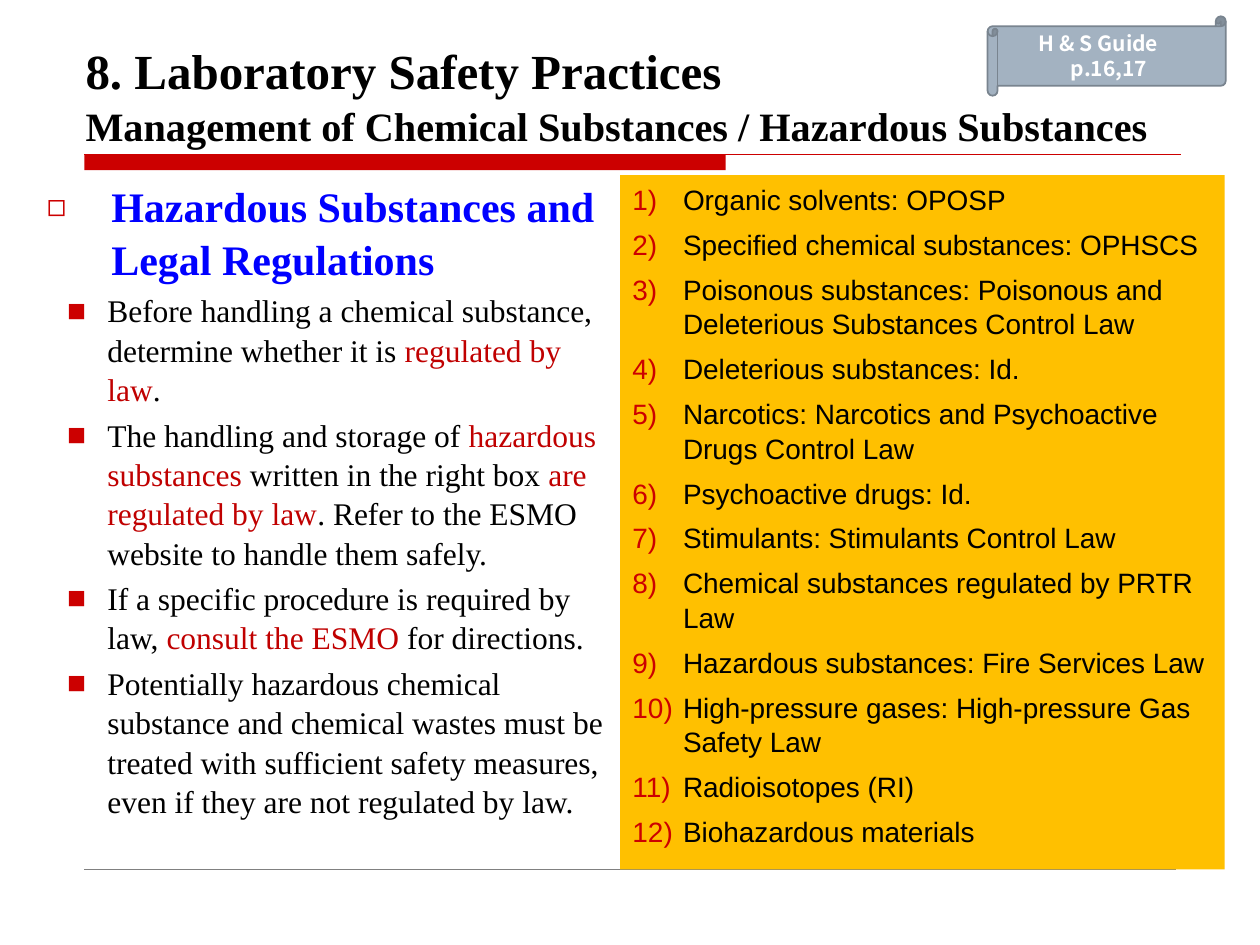
from dataclasses import dataclass

import pptx
import pptx.dml.color
import pptx.enum.shapes
import pptx.enum.text
import pptx.oxml
import pptx.oxml.ns
import pptx.util
from pptx.util import Cm

Anchor = pptx.enum.text.MSO_ANCHOR
Align = pptx.enum.text.PP_ALIGN
Shape = pptx.enum.shapes.MSO_SHAPE


@dataclass(frozen=True)
class Theme:
    serif: str = "Times New Roman"
    sans: str = "Arial"
    badge_font: str = "Noto Sans CJK JP"
    black: str = "000000"
    white: str = "FFFFFF"
    red: str = "CC0000"
    emphasis: str = "C00000"
    blue: str = "0000FF"
    amber: str = "FFC000"
    grey: str = "808080"
    scroll: str = "A3B2C1"
    scroll_edge: str = "79848F"
    title_size: int = 28
    subtitle_size: int = 23
    heading_size: int = 24
    body_size: int = 18
    list_size: int = 16
    badge_size: int = 12
    line_spacing: float = 1.04


THEME = Theme()

# Pieces at odd positions are emphasised.
ADVICE = [
    ["Before handling a chemical substance, determine whether it is ",
     "regulated by law", "."],
    ["The handling and storage of ", "hazardous substances",
     " written in the right box ", "are regulated by law",
     ". Refer to the ESMO website to handle them safely."],
    ["If a specific procedure is required by law, ", "consult the ESMO ",
     "for directions."],
    ["Potentially hazardous chemical substance and chemical wastes must be treated "
     "with sufficient safety measures, even if they are not regulated by law."],
]

REGULATED = [
    "Organic solvents: OPOSP",
    "Specified chemical substances: OPHSCS",
    "Poisonous substances: Poisonous and Deleterious Substances Control Law",
    "Deleterious substances: Id.",
    "Narcotics: Narcotics and Psychoactive Drugs Control Law",
    "Psychoactive drugs: Id.",
    "Stimulants: Stimulants Control Law",
    "Chemical substances regulated by PRTR Law",
    "Hazardous substances: Fire Services Law",
    "High-pressure gases: High-pressure Gas Safety Law",
    "Radioisotopes (RI)",
    "Biohazardous materials",
]


def rgb(color):
    return pptx.dml.color.RGBColor.from_string(color)


def add_span(para, text, *, font, size, color=THEME.black, bold=False):
    span = para.add_run()
    span.text = text
    span.font.name = font
    span.font.size = pptx.util.Pt(size)
    span.font.bold = bold
    span.font.color.rgb = rgb(color)


def add_bullet(para, indent, hanging, *, char=None, scale=100):
    """Hang the paragraph on a red character, or on a number when none is given."""
    properties = para._p.get_or_add_pPr()
    properties.set("marL", str(Cm(indent)))
    properties.set("indent", str(-Cm(hanging)))

    def append(tag):
        return pptx.oxml.ns.qn(tag), pptx.oxml.parse_xml(
            f'<{tag} xmlns:a="http://schemas.openxmlformats.org/drawingml/2006/main"/>')[1:]

    def child(parent, tag, **attributes):
        element = parent.makeelement(pptx.oxml.ns.qn(tag), attributes)
        parent.append(element)
        return element

    child(child(properties, "a:buClr"), "a:srgbClr", val=THEME.red)
    child(properties, "a:buSzPct", val=str(scale * 1000))
    child(properties, "a:buFont", typeface=THEME.sans)
    if char:
        child(properties, "a:buChar", char=char)
    else:
        child(properties, "a:buAutoNum", type="arabicParenR")


def next_paragraph(frame, space_before=0):
    """Return the empty first paragraph, or a new one with space before it."""
    first = frame.paragraphs[0]
    is_first = len(frame.paragraphs) == 1 and not first.runs
    para = first if is_first else frame.add_paragraph()
    para.space_before = pptx.util.Pt(0 if is_first else space_before)
    para.line_spacing = THEME.line_spacing
    para.alignment = Align.LEFT
    return para


def prepare_frame(shape, anchor):
    frame = shape.text_frame
    frame.word_wrap = True
    frame.auto_size = pptx.enum.text.MSO_AUTO_SIZE.NONE
    frame.vertical_anchor = anchor
    return frame


def place(shape, left, top, width, height):
    shape.left, shape.top = Cm(left), Cm(top)
    shape.width, shape.height = Cm(width), Cm(height)


def add_block(page, kind, left, top, width, height, *, fill, edge=None):
    block = page.shapes.add_shape(kind, Cm(left), Cm(top), Cm(width), Cm(height))
    block.shadow.inherit = False
    block.fill.solid()
    block.fill.fore_color.rgb = rgb(fill)
    if edge:
        block.line.color.rgb = rgb(edge)
        block.line.width = pptx.util.Pt(1)
    else:
        block.line.fill.background()
    return block


def add_rule(page, left, right, y, *, color, weight):
    rule = page.shapes.add_connector(
        pptx.enum.shapes.MSO_CONNECTOR.STRAIGHT, Cm(left), Cm(y), Cm(right), Cm(y))
    rule.line.color.rgb = rgb(color)
    rule.line.width = pptx.util.Pt(weight)
    properties = rule._element.spPr
    properties.append(properties.makeelement(pptx.oxml.ns.qn("a:effectLst"), {}))


def fill_title(title):
    place(title, 1.47, 1.07, 22.23, 2.08)
    para = next_paragraph(prepare_frame(title, Anchor.BOTTOM))
    add_span(para, "8. Laboratory Safety Practices",
             font=THEME.serif, size=THEME.title_size, bold=True)
    para.add_line_break()
    add_span(para, "Management of Chemical Substances / Hazardous Substances",
             font=THEME.serif, size=THEME.subtitle_size, bold=True)


def fill_advice(body):
    place(body, 0.69, 3.48, 11.81, 14.4)
    frame = prepare_frame(body, Anchor.TOP)
    heading = next_paragraph(frame)
    add_bullet(heading, 1.3, 1.3, char="◻", scale=75)
    add_span(heading, "Hazardous Substances and Legal Regulations",
             font=THEME.serif, size=THEME.heading_size, color=THEME.blue, bold=True)
    for pieces in ADVICE:
        para = next_paragraph(frame, 0.2 * THEME.body_size)
        para.level = 1
        add_bullet(para, 1.22, 0.81, char="■")
        for index, piece in enumerate(pieces):
            add_span(para, piece, font=THEME.serif, size=THEME.body_size,
                     color=THEME.emphasis if index % 2 else THEME.black)


def add_badge(page):
    badge = add_block(page, Shape.HORIZONTAL_SCROLL, 19.91, 0.33, 4.8, 1.6,
                      fill=THEME.scroll, edge=THEME.scroll_edge)
    para = next_paragraph(prepare_frame(badge, Anchor.MIDDLE))
    para.alignment = Align.CENTER
    para.line_spacing = 1.0
    add_span(para, "H & S Guide　p.16,17", font=THEME.badge_font,
             size=THEME.badge_size, color=THEME.white, bold=True)


def add_regulated_list(page):
    panel = add_block(page, Shape.RECTANGLE, 12.5, 3.53, 12.19, 14,
                      fill=THEME.amber)
    frame = prepare_frame(panel, Anchor.TOP)
    for item in REGULATED:
        para = next_paragraph(frame, 0.35 * THEME.list_size)
        add_bullet(para, 1.02, 1.02)
        add_span(para, item, font=THEME.sans, size=THEME.list_size)


def main():
    deck = pptx.Presentation()
    deck.slide_width, deck.slide_height = Cm(25.4), Cm(19.05)
    page = deck.slides.add_slide(deck.slide_layouts[1])
    add_block(page, Shape.RECTANGLE, 1.7, 3.12, 12.93, 0.31, fill=THEME.red)
    add_rule(page, 1.7, 23.8, 3.12, color=THEME.red, weight=0.75)
    add_rule(page, 1.7, 23.7, 17.53, color=THEME.grey, weight=0.25)
    fill_title(page.shapes.title)
    fill_advice(page.placeholders[1])
    add_badge(page)
    add_regulated_list(page)
    deck.save("out.pptx")


if __name__ == "__main__":
    main()
